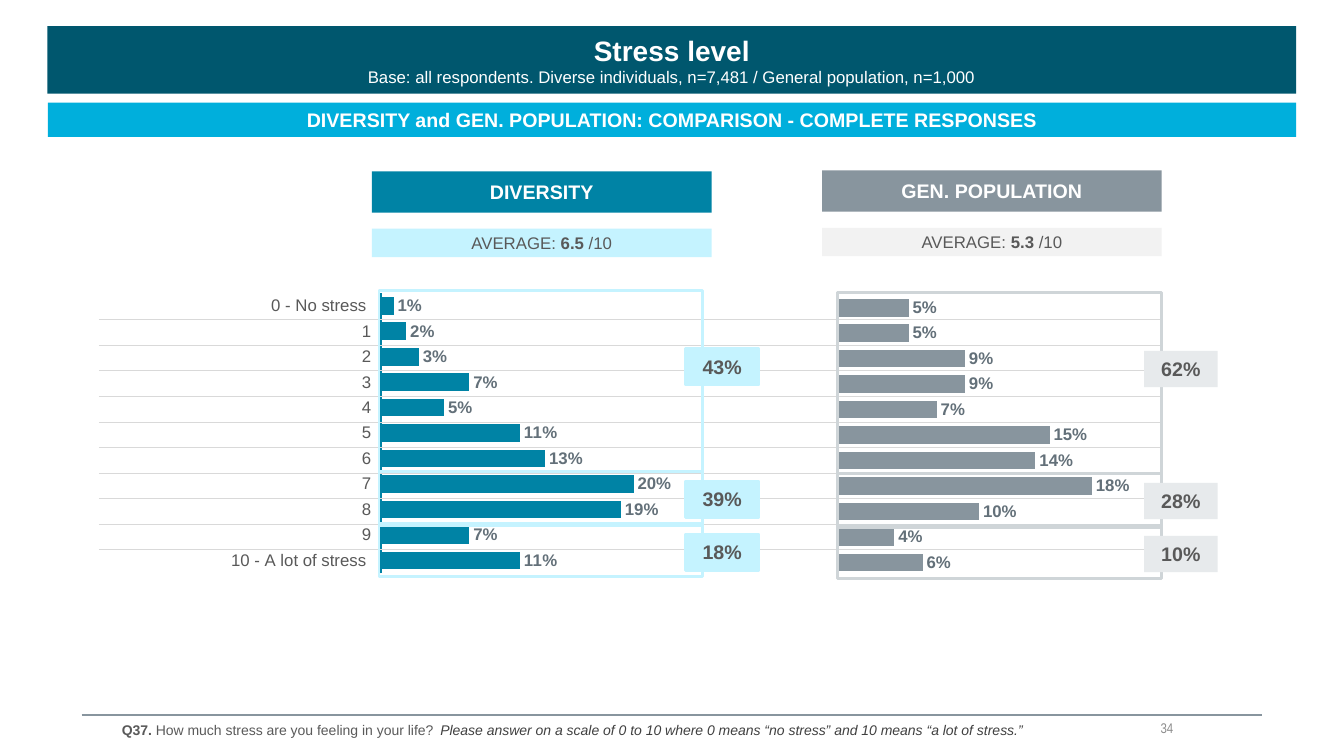
from lxml import etree
from pptx import Presentation
from pptx.chart.data import CategoryChartData
from pptx.dml.color import RGBColor
from pptx.enum.chart import XL_CHART_TYPE, XL_LABEL_POSITION, XL_TICK_LABEL_POSITION, XL_TICK_MARK
from pptx.enum.shapes import MSO_CONNECTOR, MSO_SHAPE
from pptx.enum.text import MSO_ANCHOR, PP_ALIGN
from pptx.oxml import parse_xml
from pptx.oxml.ns import nsdecls, qn
from pptx.util import Pt

BAR = XL_CHART_TYPE.BAR_CLUSTERED
END = XL_LABEL_POSITION.OUTSIDE_END
LOW = XL_TICK_LABEL_POSITION.LOW
NONE = XL_TICK_MARK.NONE
LINE = MSO_CONNECTOR.STRAIGHT
RECT = MSO_SHAPE.RECTANGLE
MID = MSO_ANCHOR.MIDDLE
CENTER, RIGHT = PP_ALIGN.CENTER, PP_ALIGN.RIGHT

HEX = {
    "navy": "00576E", "cyan": "00AFDC", "teal": "0083A5", "grey": "88959E",
    "ice": "C5F3FF", "fog": "F2F2F2", "mist": "E7EAEC", "edge": "CFD5D8",
    "rule": "D9D9D9", "text": "595959", "ask": "5A5A5A", "note": "404040",
    "label": "637079", "page": "8C8C8C", "white": "FFFFFF", "black": "000000",
}


def rgb(name):
    return RGBColor.from_string(HEX[name])


def style(font, size, color, bold=False, italic=False, face="Arial"):
    font.size, font.name = Pt(size), face
    font.bold, font.italic = bold, italic
    font.color.rgb = rgb(color)


def write(para, runs, align=None):
    """Each run is (text, size, color, further font options)."""
    para.alignment = align
    for text, size, color, *more in runs:
        run = para.add_run()
        run.text = text
        style(run.font, size, color, *more)


def rect(slide, box, fill=None, edge=None, lines=()):
    shape = slide.shapes.add_shape(RECT, *map(Pt, box))
    shape.shadow.inherit = False
    if fill:
        shape.fill.solid()
        shape.fill.fore_color.rgb = rgb(fill)
    else:
        shape.fill.background()
    if edge:
        shape.line.color.rgb = rgb(edge)
        shape.line.width = Pt(2)
    else:
        shape.line.fill.background()
    frame = shape.text_frame
    frame.vertical_anchor = MID
    frame.margin_top = frame.margin_bottom = 0
    for i, runs in enumerate(lines):
        para = frame.add_paragraph() if i else frame.paragraphs[0]
        write(para, runs, CENTER)


def rule(slide, left, right, y, color, width):
    line = slide.shapes.add_connector(LINE, Pt(left), Pt(y), Pt(right), Pt(y))
    line.line.color.rgb = rgb(color)
    line.line.width = Pt(width)
    etree.SubElement(line._element.spPr, qn("a:effectLst"))


def label(slide, box):
    frame = slide.shapes.add_textbox(*map(Pt, box)).text_frame
    frame.word_wrap = True
    return frame


# Title and subtitle bands
def banner(slide, x, y, w):
    rect(slide, (x, y, w, 48.2), "navy", lines=[
        [("Stress level", 20, "white", True)],
        [("Base: all respondents. Diverse individuals, n=7,481 / "
          "General population, n=1,000", 12, "white")]])
    rect(slide, (x + 0.5, y + 54.7, w - 0.5, 24.5), "cyan", lines=[
        [("DIVERSITY and GEN. POPULATION: COMPARISON - COMPLETE RESPONSES",
          14, "white", True)]])


# Group heading with its average
def head(slide, x, y, w, name, mean, dark, pale):
    rect(slide, (x, y, w, 29.5), dark, lines=[[(name, 14, "white", True)]])
    rect(slide, (x, y + 41, w, 20.2), pale, lines=[[
        ("AVERAGE: ", 12, "text"), (mean, 12, "text", True),
        (" /10", 12, "text")]])


# Bar chart, plot area set as shares of the box
def bars(slide, box, plot, cats, vals, color, top, axis):
    data = CategoryChartData(number_format="0%")
    data.categories = cats
    data.add_series("Series 1", vals)
    chart = slide.shapes.add_chart(BAR, *map(Pt, box), data).chart
    chart.has_legend = chart.has_title = False
    style(chart.font, 18, "black", face="Calibri")

    value = chart.value_axis
    value.minimum_scale, value.maximum_scale = 0, top
    value.has_major_gridlines = False
    value.visible = False
    cat = chart.category_axis
    cat.reverse_order = True
    cat.visible = axis
    if axis:
        cat.major_tick_mark = cat.minor_tick_mark = NONE
        cat.tick_label_position = LOW
        cat.format.line.color.rgb = rgb(color)
        style(cat.tick_labels.font, 12, "text")

    group = chart.plots[0]
    group.gap_width = 45
    group.vary_by_categories = False
    fill = group.series[0].format.fill
    fill.solid()
    fill.fore_color.rgb = rgb(color)
    group.has_data_labels = True
    tags = group.data_labels
    tags.show_value = True
    tags.position = END
    tags.number_format, tags.number_format_is_linked = "0%", False
    style(tags.font, 12, "label", True)

    area = chart._chartSpace.chart.plotArea
    for old in area.findall(qn("c:layout")):
        area.remove(old)
    spots = "".join(f'<c:{k} val="{v}"/>' for k, v in zip("xywh", plot))
    modes = '<c:xMode val="edge"/><c:yMode val="edge"/>'
    area.insert(0, parse_xml(
        f'<c:layout {nsdecls("c")}><c:manualLayout><c:layoutTarget val="inner"/>'
        f'{modes}{spots}</c:manualLayout></c:layout>'))


# Frames around score groups, each with its total
def totals(slide, x, y, shares, frame, fill, edge):
    spans = [(0, 129.6, 41.8), (129.6, 38.2, 136.2), (166.3, 38.2, 174)]
    for (dy, h, _) in spans:
        rect(slide, (x, y + dy, 231.1, h), edge=frame)
    for (_, _, dy), share in zip(spans, shares):
        rect(slide, (x + 218.9, y + dy, 52.6, 25.9), fill, edge,
             [[(share, 14, "text", True)]])


# Question and page number
def footer(slide, x, y, w):
    rule(slide, x, x + w, y, "grey", 1.5)
    para = label(slide, (x + 21.6, y - 0.7, 809.3, 20.9)).paragraphs[0]
    para.line_spacing, para.space_after = 1.07, Pt(8)
    write(para, [
        ("Q37. ", 10, "text", True),
        ("How much stress are you feeling in your life?", 10, "ask"),
        ("  ", 11, "black", False, False, "Calibri"),
        ("Please answer on a scale of 0 to 10 where 0 means “no stress” "
         "and 10 means “a lot of stress.”", 10, "note", False, True)])
    page = label(slide, (x + 570.2, y, 209.5, 18.7))
    page.margin_left = page.margin_right = 0
    page.margin_top = page.margin_bottom = 0
    page.vertical_anchor = MID
    write(page.paragraphs[0],
          [("34", 10, "page", False, False, "Arial Narrow")], RIGHT)


def main():
    deck = Presentation()
    deck.slide_width, deck.slide_height = Pt(960), Pt(540)
    slide = deck.slides.add_slide(deck.slide_layouts[6])

    banner(slide, 33.8, 18.7, 892.1)
    head(slide, 265.7, 122.4, 242.6, "DIVERSITY", "6.5", "teal", "ice")
    head(slide, 587.2, 121.7, 242.6, "GEN. POPULATION", "5.3", "grey", "fog")

    cats = ["0 - No stress ", *map(str, range(1, 10)), "10 - A lot of stress "]
    bars(slide, (0, 201.6, 530.6, 216), (0.513, 0.036, 0.425, 0.927), cats,
         [0.01, 0.02, 0.03, 0.07, 0.05, 0.11, 0.13, 0.2, 0.19, 0.07, 0.11],
         "teal", 0.25, True)
    bars(slide, (307.4, 203, 522, 216), (0.558, 0.036, 0.386, 0.927),
         list(map(str, range(1, 12))),
         [0.05, 0.05, 0.09, 0.09, 0.07, 0.15, 0.14, 0.18, 0.1, 0.04, 0.06],
         "grey", 0.2, False)

    for i in range(len(cats) - 1):
        rule(slide, 70.6, 829.4, 228.5 + 18.25 * i, "rule", 0.75)

    totals(slide, 598.3, 208.8, ["62%", "28%", "10%"], "edge", "mist", None)
    totals(slide, 270.7, 207.4, ["43%", "39%", "18%"], "ice", "ice", "ice")
    footer(slide, 58.3, 510.5, 843.1)
    deck.save("out.pptx")


if __name__ == "__main__":
    main()
